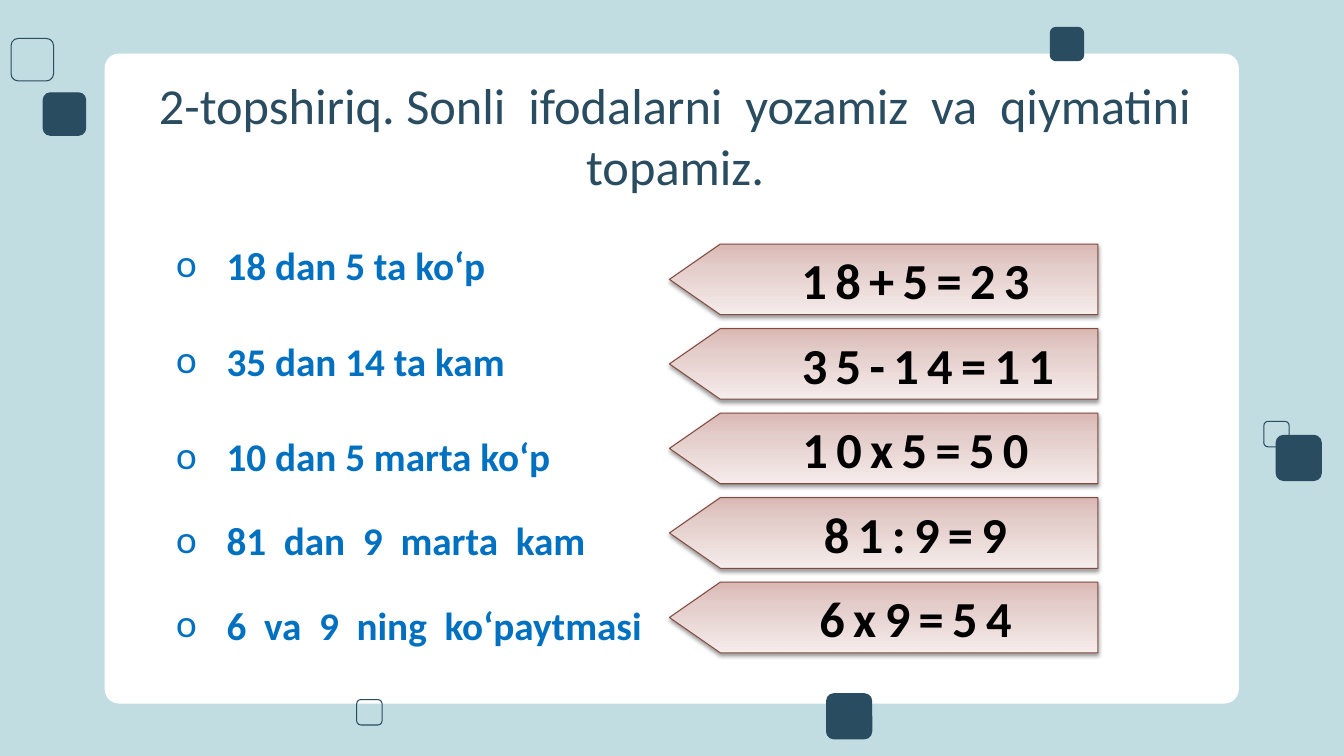
from dataclasses import dataclass

from lxml.etree import SubElement
from pptx import Presentation
from pptx.dml.color import RGBColor
from pptx.enum.shapes import MSO_SHAPE as Shape
from pptx.enum.text import MSO_ANCHOR as Anchor, PP_ALIGN as Align
from pptx.oxml import parse_xml
from pptx.oxml.ns import nsdecls, qn
from pptx.util import Cm, Pt


@dataclass(frozen=True)
class Theme:
    background: str = "C1DDE2"
    card: str = "FFFFFF"
    dark: str = "294C60"
    task: str = "0070C0"
    answer: str = "000000"
    arrow_line: str = "824C42"
    arrow_stops: tuple = ((0, "DAB8B4"), (35, "E4CECB"), (100, "F5ECEB"))
    font: str = "Calibri"
    large: int = 36
    medium: int = 28
    line: float = 0.75


def color(value):
    return RGBColor.from_string(value)


def write(box, text, *, theme, size, fill, bold=False, align=Align.LEFT, spacing=0):
    """Put one formatted run in the first paragraph; spacing is in points."""
    paragraph = box.text_frame.paragraphs[0]
    paragraph.alignment = align
    run = paragraph.add_run()
    run.text = text
    run.font.name = theme.font
    run.font.size = Pt(size)
    run.font.bold = bold
    run.font.color.rgb = color(fill)
    if spacing:
        run.font._element.set("spc", str(spacing * 100))
    return paragraph


class SlideBuilder:
    def __init__(self, slide, theme):
        self.slide, self.theme = slide, theme
        background = slide.background.fill
        background.solid()
        background.fore_color.rgb = color(theme.background)

    def shape(self, kind, left, top, width, height, *, corner, fill=None, line=None):
        shape = self.slide.shapes.add_shape(
            kind, Cm(left), Cm(top), Cm(width), Cm(height))
        shape.shadow.inherit = False
        shape.adjustments[0] = corner
        if fill:
            shape.fill.solid()
            shape.fill.fore_color.rgb = color(fill)
        else:
            shape.fill.background()
        if line:
            shape.line.color.rgb = color(line)
            shape.line.width = Pt(self.theme.line)
        else:
            shape.line.fill.background()
        return shape

    def square(self, left, top, size, filled):
        dark = self.theme.dark
        self.shape(Shape.ROUNDED_RECTANGLE, left, top, size, size, corner=0.167,
                   fill=dark if filled else None, line=dark)

    def text(self, text, left, top, width, height, *, margin=0.13, **text_format):
        box = self.slide.shapes.add_textbox(Cm(left), Cm(top), Cm(width), Cm(height))
        frame = box.text_frame
        frame.word_wrap = True
        frame.vertical_anchor = Anchor.TOP
        frame.margin_left = frame.margin_right = Cm(0.25)
        frame.margin_top = frame.margin_bottom = Cm(margin)
        return write(box, text, theme=self.theme, **text_format)

    def task(self, text, top, width):
        paragraph = self.text(text, 4.19, top, width, 1.45, size=self.theme.medium,
                              fill=self.theme.task, bold=True)
        properties = paragraph._p.get_or_add_pPr()
        properties.set("marL", str(Cm(1.27)))
        properties.set("indent", str(-Cm(1.27)))
        SubElement(properties, qn("a:buFont"), typeface=self.theme.font)
        SubElement(properties, qn("a:buChar"), char="o")

    def arrow(self, top):
        """Draw a left-pointing arrow with a gradient and a soft shadow."""
        shape = self.shape(Shape.PENTAGON, 16.87, top, 10.8, 1.78, corner=0.72,
                           line=self.theme.arrow_line)
        shape.rotation = 180
        stops = "".join(
            f'<a:gs pos="{position * 1000}"><a:srgbClr val="{value}"/></a:gs>'
            for position, value in self.theme.arrow_stops)
        gradient = parse_xml(
            f'<a:gradFill {nsdecls("a")} rotWithShape="1"><a:gsLst>{stops}</a:gsLst>'
            '<a:lin ang="16200000" scaled="1"/></a:gradFill>')
        properties = shape._element.spPr
        properties.replace(properties.find(qn("a:noFill")), gradient)
        properties.find(qn("a:effectLst")).append(parse_xml(
            f'<a:outerShdw {nsdecls("a")} blurRad="{Pt(3.1)}" dist="{Pt(1.6)}" '
            'dir="5400000" rotWithShape="0"><a:srgbClr val="000000">'
            '<a:alpha val="38000"/></a:srgbClr></a:outerShdw>'))

    def answer(self, text, top, width):
        self.arrow(top)
        self.text(text, 19.58, top, width, 1.8, size=self.theme.large,
                  fill=self.theme.answer, bold=True, align=Align.CENTER, spacing=6)


TITLE = "2-topshiriq. Sonli  ifodalarni  yozamiz  va  qiymatini  topamiz. "

# left, top, size, filled
SQUARES = [
    (31.85, 10.62, 0.64, False),
    (32.16, 10.97, 1.14, True),
    (0.28, 0.97, 1.07, False),
    (1.09, 2.34, 1.07, True),
    (20.83, 17.48, 1.14, True),
    (26.47, 0.69, 0.84, True),
    (8.99, 17.63, 0.64, False),
]

# task, its top and width, answer, its width
EXERCISES = [
    ("18 dan 5 ta ko‘p", 5.94, 9.37, "18+5=23", 6.99),
    ("35 dan 14 ta kam", 8.36, 9.58, "35-14=11", 7.62),
    ("10 dan 5 marta ko‘p", 10.77, 14.3, "10x5=50", 6.99),
    ("81  dan  9  marta  kam", 12.88, 11.4, "81:9=9", 6.99),
    ("6  va  9  ning  ko‘paytmasi", 15.01, 12.7, "6x9=54", 6.99),
]
FIRST_ANSWER_TOP, ANSWER_STEP = 6.15, 2.13


def main():
    presentation = Presentation()
    presentation.slide_width, presentation.slide_height = Cm(33.87), Cm(19.05)
    theme = Theme()
    slide = presentation.slides.add_slide(presentation.slide_layouts[6])
    builder = SlideBuilder(slide, theme)

    builder.shape(Shape.ROUNDED_RECTANGLE, 2.64, 1.35, 28.58, 16.38,
                  corner=0.022, fill=theme.card)
    for square in SQUARES:
        builder.square(*square)
    builder.text(TITLE, 2.87, 1.63, 28.58, 2.13, margin=0.25, size=theme.large,
                 fill=theme.dark, align=Align.CENTER)
    for row, (task, top, width, answer, answer_width) in enumerate(EXERCISES):
        builder.task(task, top, width)
        builder.answer(answer, FIRST_ANSWER_TOP + row * ANSWER_STEP, answer_width)

    presentation.save("out.pptx")


if __name__ == "__main__":
    main()
